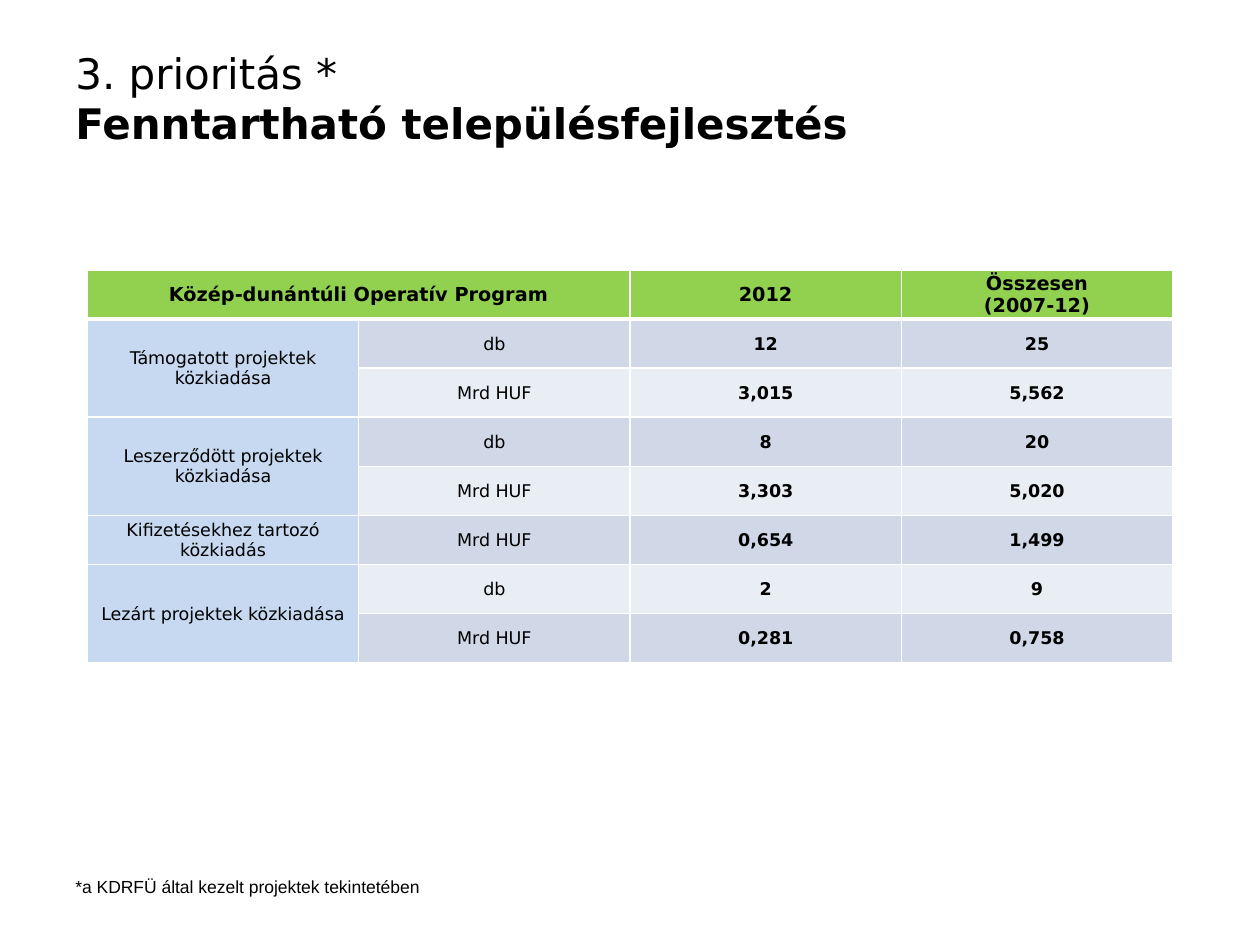
from dataclasses import dataclass

from lxml import etree
from pptx import Presentation
from pptx import util as u
from pptx.dml.color import RGBColor
from pptx.enum import text
from pptx.oxml.ns import qn

COLORS = {
    "text": "000000",
    "header": "92D050",
    "label": "C6D9F1",
    "band_dark": "D0D8E8",
    "band_light": "E9EDF4",
    "border": "FFFFFF",
}
BANDS = ("band_dark", "band_light")
HEADER_SIZE, BODY_SIZE = 11, 10
COL_WIDTH, ROW_HEIGHT = u.Cm(5.47), u.Cm(0.99)


@dataclass
class Group:
    label: str
    rows: list[tuple[str, str, str]]


GROUPS = [
    Group("Támogatott projektek közkiadása",
          [("db", "12", "25"), ("Mrd HUF", "3,015", "5,562")]),
    Group("Leszerződött projektek közkiadása",
          [("db", "8", "20"), ("Mrd HUF", "3,303", "5,020")]),
    Group("Kifizetésekhez tartozó közkiadás",
          [("Mrd HUF", "0,654", "1,499")]),
    Group("Lezárt projektek közkiadása",
          [("db", "2", "9"), ("Mrd HUF", "0,281", "0,758")]),
]


def apply(obj, values: dict) -> None:
    for name, value in values.items():
        setattr(obj, name, value)


def add_run(p, content: str, size: float, bold: bool = False,
            font: str = "DejaVu Sans") -> None:
    r = p.add_run()
    r.text = content
    apply(r.font, {"name": font, "size": u.Pt(size), "bold": bold})
    r.font.color.rgb = RGBColor.from_string(COLORS["text"])


def add_text_box(s, left: float, top: float, width: float, height: float, **frame):
    tf = s.shapes.add_textbox(*map(u.Cm, (left, top, width, height))).text_frame
    apply(tf, {"word_wrap": True, **frame})
    return tf.paragraphs[0]


def add_borders(cell, bottom: float) -> None:
    tcPr = cell._tc.get_or_add_tcPr()
    for side, width in (("L", 1), ("R", 1), ("T", 1), ("B", bottom)):
        ln = etree.SubElement(tcPr, qn(f"a:ln{side}"), w=str(u.Pt(width)))
        fill = etree.SubElement(ln, qn("a:solidFill"))
        etree.SubElement(fill, qn("a:srgbClr"), val=COLORS["border"])


def fill_cell(cell, content: str, color: str, size: float = BODY_SIZE,
              bold: bool = False) -> None:
    apply(cell, {
        "margin_left": u.Cm(0.02),
        "margin_right": u.Cm(0.02),
        "margin_top": u.Cm(0.02),
        "margin_bottom": 0,
        "vertical_anchor": text.MSO_ANCHOR.MIDDLE,
    })
    cell.fill.solid()
    cell.fill.fore_color.rgb = RGBColor.from_string(COLORS[color])
    tf = cell.text_frame
    for i, line in enumerate(content.split("\n")):
        p = tf.add_paragraph() if i else tf.paragraphs[0]
        p.alignment = text.PP_ALIGN.CENTER
        add_run(p, line, size, bold)


def add_program_table(s, groups: list[Group]) -> None:
    count = 1 + sum(len(group.rows) for group in groups)
    table = s.shapes.add_table(count, 4, u.Cm(1.76), u.Cm(5.44),
                               COL_WIDTH * 4, ROW_HEIGHT * count).table
    apply(table, {"first_row": False, "horz_banding": False})
    for col in table.columns:
        col.width = COL_WIDTH
    for i, row in enumerate(table.rows):
        row.height = ROW_HEIGHT
        for cell in row.cells:
            add_borders(cell, bottom=1 if i else 3)

    table.cell(0, 0).merge(table.cell(0, 1))
    headers = {0: "Közép-dunántúli Operatív Program", 2: "2012",
               3: "Összesen\n(2007-12)"}
    for col, header in headers.items():
        fill_cell(table.cell(0, col), header, "header", HEADER_SIZE, True)

    top = 1
    for group in groups:
        bottom = top + len(group.rows) - 1
        if bottom > top:
            table.cell(top, 0).merge(table.cell(bottom, 0))
        fill_cell(table.cell(top, 0), group.label, "label")
        for i, values in enumerate(group.rows, top):
            for col, value in enumerate(values, 1):
                fill_cell(table.cell(i, col), value, BANDS[(i - 1) % 2], bold=col > 1)
        top = bottom + 1


def main() -> None:
    prs = Presentation()
    apply(prs, {"slide_width": u.Cm(25.4), "slide_height": u.Cm(19.05)})
    s = prs.slides.add_slide(prs.slide_layouts[6])

    p = add_text_box(s, 1.27, 0.76, 23.65, 3.18, margin_top=u.Cm(0.2))
    add_run(p, "3. prioritás *", 24)
    p.add_line_break()
    add_run(p, "Fenntartható településfejlesztés", 24, True)

    add_program_table(s, GROUPS)

    p = add_text_box(s, 1.27, 17.53, 10, 0.69,
                     auto_size=text.MSO_AUTO_SIZE.SHAPE_TO_FIT_TEXT)
    add_run(p, "*a KDRFÜ által kezelt projektek tekintetében", 10, font="Arial")

    prs.save("out.pptx")


if __name__ == "__main__":
    main()
